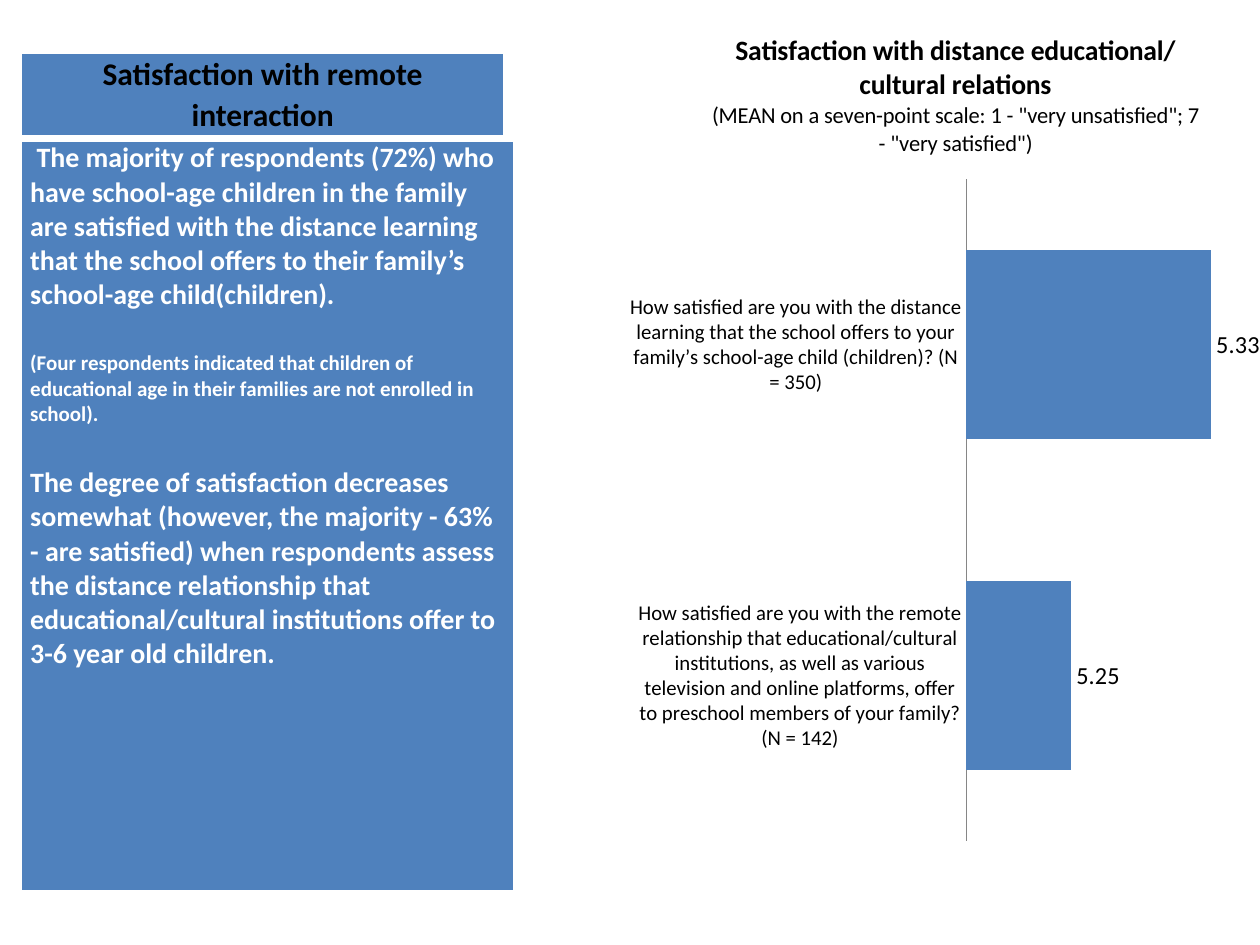
from dataclasses import dataclass

from lxml import etree
from pptx import Presentation
from pptx.chart.data import CategoryChartData
from pptx.dml.color import RGBColor
from pptx.enum.chart import (XL_CHART_TYPE, XL_LABEL_POSITION, XL_TICK_LABEL_POSITION,
                             XL_TICK_MARK)
from pptx.enum.text import PP_ALIGN
from pptx.oxml.ns import qn
from pptx.util import Inches, Pt

BAR_CLUSTERED = XL_CHART_TYPE.BAR_CLUSTERED
OUTSIDE_END = XL_LABEL_POSITION.OUTSIDE_END
NO_LABELS = XL_TICK_LABEL_POSITION.NONE
NO_TICKS = XL_TICK_MARK.NONE
CENTER = PP_ALIGN.CENTER
BLANK_LAYOUT = 6


@dataclass(frozen=True)
class Theme:
    font: str = "Calibri"
    blue: RGBColor = RGBColor(0x4F, 0x81, 0xBD)
    black: RGBColor = RGBColor(0, 0, 0)
    white: RGBColor = RGBColor(0xFF, 0xFF, 0xFF)
    axis: RGBColor = RGBColor(0x86, 0x86, 0x86)
    heading: int = 18
    body: int = 16
    label: int = 14
    subtitle: int = 13
    small: int = 12


THEME = Theme()
NUMBER_FORMAT = "###0.00"
BORDERS = {"a:lnL": 1, "a:lnR": 1, "a:lnT": 1, "a:lnB": 3}

HEADING = "Satisfaction with remote interaction"
FINDINGS = [
    (" The majority of respondents (72%) who have school-age children in the family are "
     "satisfied with the distance learning that the school offers to their family’s "
     "school-age child(children).", THEME.body),
    ("(Four respondents indicated that children of educational age in their families are "
     "not enrolled in school).", THEME.small),
    ("The degree of satisfaction decreases somewhat (however, the majority - 63% - are "
     "satisfied) when respondents assess the distance relationship that "
     "educational/cultural institutions offer to 3-6 year old children.", THEME.body),
]
CHART_TITLE = "Satisfaction with distance educational/cultural relations"
CHART_SCALE = '(MEAN on a seven-point scale: 1 - "very unsatisfied"; 7 - "very satisfied")'
MEANS = {
    "How satisfied are you with the distance learning that the school offers to your "
    "family’s school-age child (children)? (N = 350)": 5.33,
    "How satisfied are you with the remote relationship that educational/cultural "
    "institutions, as well as various television and online platforms, offer to preschool "
    "members of your family? (N = 142)": 5.25,
}


def style_font(font, size, color, bold=False):
    font.name = THEME.font
    font.size = Pt(size)
    font.bold = bold
    font.color.rgb = color


def add_borders(cell):
    properties = cell._tc.get_or_add_tcPr()
    for tag, width in BORDERS.items():
        border = etree.SubElement(properties, qn(tag), w=str(Pt(width)))
        fill = etree.SubElement(border, qn("a:solidFill"))
        etree.SubElement(fill, qn("a:srgbClr"), val=str(THEME.white))


def add_panel(slide, left, top, width, height):
    table = slide.shapes.add_table(1, 1, Inches(left), Inches(top),
                                   Inches(width), Inches(height)).table
    cell = table.cell(0, 0)
    add_borders(cell)
    cell.fill.solid()
    cell.fill.fore_color.rgb = THEME.blue
    cell.margin_left = cell.margin_right = Inches(0.07)
    cell.margin_top = cell.margin_bottom = 0
    return cell.text_frame


def add_heading(slide):
    heading = add_panel(slide, 0.17, 0.42, 3.83, 0.67).paragraphs[0]
    heading.text = HEADING
    heading.alignment = CENTER
    heading.line_spacing = 1.07
    style_font(heading.font, THEME.heading, THEME.black, bold=True)


def add_findings(slide):
    panel = add_panel(slide, 0.17, 1.12, 3.91, 5.96)
    for index, (text, size) in enumerate(FINDINGS):
        finding = panel.add_paragraph() if index else panel.paragraphs[0]
        finding.text = text
        finding.space_before = Pt(22 if index else 0)
        style_font(finding.font, size, THEME.white, bold=True)


def set_layout(parent, index, **settings):
    for old_layout in parent.findall(qn("c:layout")):
        parent.remove(old_layout)
    layout = etree.Element(qn("c:layout"))
    parent.insert(index, layout)
    manual = etree.SubElement(layout, qn("c:manualLayout"))
    for name, value in settings.items():
        etree.SubElement(manual, qn(f"c:{name}"), val=str(value))


def add_chart_title(chart):
    title = chart.chart_title
    frame = title.text_frame
    heading = frame.paragraphs[0]
    heading.text = CHART_TITLE
    style_font(heading.font, THEME.body, THEME.black, bold=True)
    scale = frame.add_paragraph()
    scale.text = CHART_SCALE
    style_font(scale.font, THEME.subtitle, THEME.black)
    set_layout(title._element, 1, xMode="edge", yMode="edge", x=0.12, y=0.03)


def style_axes(chart):
    questions = chart.category_axis
    questions.reverse_order = True
    questions.major_tick_mark = NO_TICKS
    questions.format.line.color.rgb = THEME.axis
    style_font(questions.tick_labels.font, THEME.small, THEME.black)

    means = chart.value_axis
    means.minimum_scale = 5.19
    means.maximum_scale = 5.35
    means.has_major_gridlines = False
    means.major_tick_mark = NO_TICKS
    means.tick_label_position = NO_LABELS
    means.format.line.fill.background()


def style_bars(chart):
    plot = chart.plots[0]
    plot.vary_by_categories = False
    plot.gap_width = 75
    plot.overlap = -25
    bars = plot.series[0]
    bars.format.fill.solid()
    bars.format.fill.fore_color.rgb = THEME.blue
    labels = bars.data_labels
    labels.show_value = True
    labels.position = OUTSIDE_END
    labels.number_format = NUMBER_FORMAT
    labels.number_format_is_linked = False
    style_font(labels.font, THEME.label, THEME.black)


def add_means_chart(slide):
    data = CategoryChartData(number_format=NUMBER_FORMAT)
    data.categories = list(MEANS)
    data.add_series("Series 1", list(MEANS.values()))
    chart = slide.shapes.add_chart(BAR_CLUSTERED, Inches(5), 0,
                                   Inches(5), Inches(7.5), data).chart
    chart.has_legend = False
    style_font(chart.font, THEME.label, THEME.black)
    add_chart_title(chart)
    style_axes(chart)
    style_bars(chart)
    plot_area = chart._chartSpace.find(".//" + qn("c:plotArea"))
    set_layout(plot_area, 0, layoutTarget="inner", xMode="edge", yMode="edge",
               x=0.535, y=0.19, w=0.45, h=0.7)


def main():
    presentation = Presentation()
    presentation.slide_width = Inches(10)
    presentation.slide_height = Inches(7.5)
    slide = presentation.slides.add_slide(presentation.slide_layouts[BLANK_LAYOUT])
    add_means_chart(slide)
    add_heading(slide)
    add_findings(slide)
    presentation.save("out.pptx")


if __name__ == "__main__":
    main()
